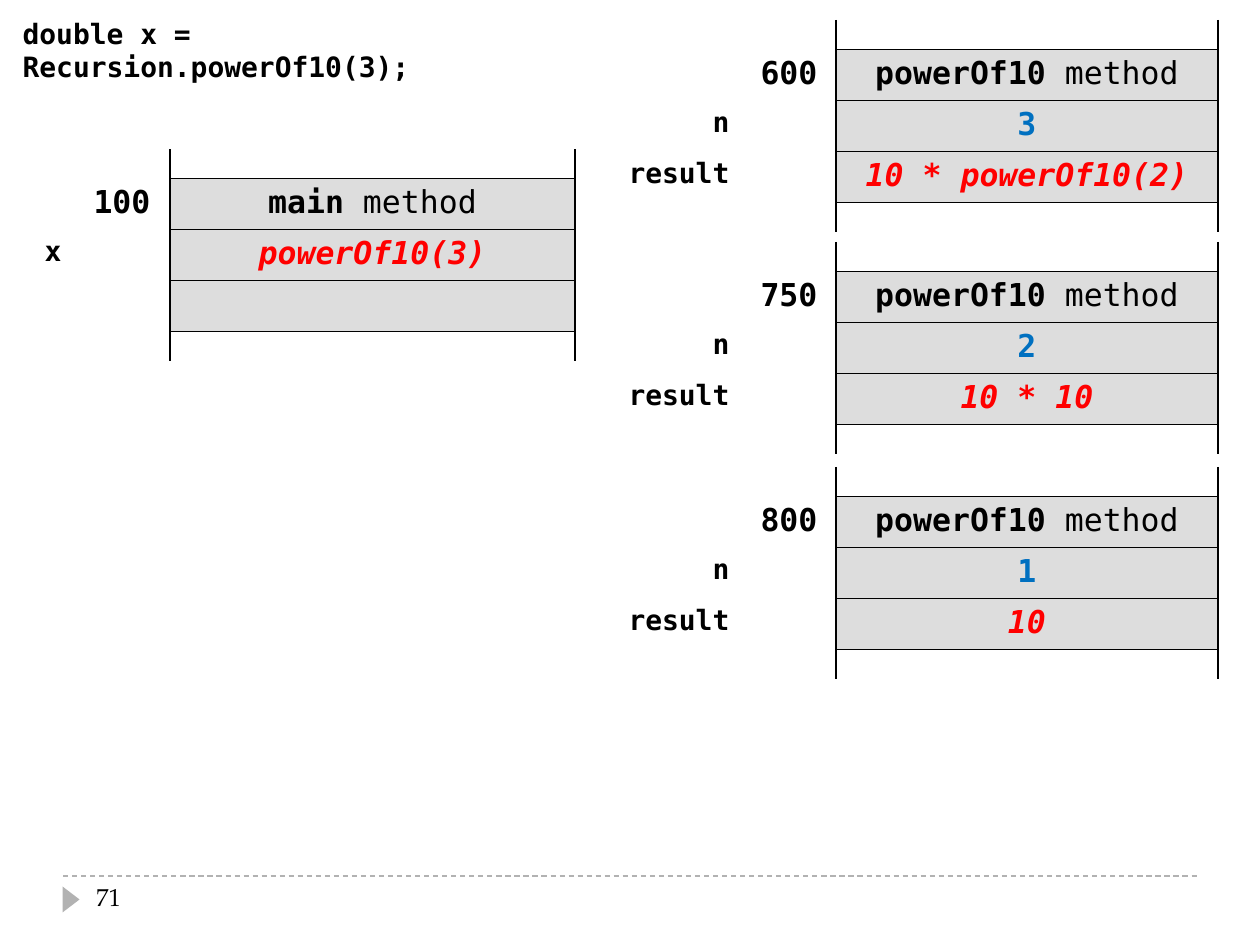
from lxml import etree
from pptx import Presentation
from pptx import util as u
from pptx.dml.color import RGBColor
from pptx.enum import dml, shapes, text
from pptx.oxml import ns

BLACK = RGBColor(0x00, 0x00, 0x00)
BLUE = RGBColor(0x00, 0x70, 0xC0)
RED = RGBColor(0xFF, 0x00, 0x00)
CELL_GREY = RGBColor(0xDD, 0xDD, 0xDD)
FOOTER_GREY = RGBColor(0xB2, 0xB2, 0xB2)
MONO, SERIF = "DejaVu Sans Mono", "TeX Gyre Pagella"
NO_GRID_STYLE = "{2D5ABB26-0587-4C30-8999-92F81FD0307C}"

STATEMENT = "double x = Recursion.powerOf10(3);"
PAGE_NUMBER = "71"
CALL_COLUMNS, MAIN_COLUMNS = (147, 94, 382), (67, 96, 405)
ROW_HEIGHTS = (29, 51, 51, 51, 29)
FRAMES = [
    dict(left=595, top=20, columns=CALL_COLUMNS, address="600", method="powerOf10 ",
         variables=[("n", "3", BLUE), ("result", "10 * powerOf10(2)", RED)]),
    dict(left=595, top=242, columns=CALL_COLUMNS, address="750", method="powerOf10 ",
         variables=[("n", "2", BLUE), ("result", "10 * 10", RED)]),
    dict(left=595, top=467, columns=CALL_COLUMNS, address="800", method="powerOf10 ",
         variables=[("n", "1", BLUE), ("result", "10", RED)]),
    dict(left=7, top=149, columns=MAIN_COLUMNS, address="100", method="main ",
         variables=[("x", "powerOf10(3)", RED), ("", "", RED)]),
]


def px(length):
    return u.Emu(round(length * 914400 / 126))


def add_run(paragraph, words, size, color=BLACK, bold=True, italic=False, font=MONO):
    run = paragraph.add_run()
    run.text = words
    run.font.name, run.font.size = font, u.Pt(size)
    run.font.bold, run.font.italic = bold, italic
    run.font.color.rgb = color


def fill_cell(cell, runs, align):
    paragraph = cell.text_frame.paragraphs[0]
    paragraph.alignment = align
    for words, size, color, bold, italic in runs:
        if words:
            add_run(paragraph, words, size, color, bold, italic)


def set_borders(cell, sides):
    properties = cell._tc.get_or_add_tcPr()
    for side in "LRTB":
        line = etree.SubElement(properties, ns.qn("a:ln" + side), w=str(u.Pt(1)))
        if side in sides:
            solid = etree.SubElement(line, ns.qn("a:solidFill"))
            etree.SubElement(solid, ns.qn("a:srgbClr"), val=str(BLACK))
        else:
            etree.SubElement(line, ns.qn("a:noFill"))


def add_frame(slide, left, top, columns, address, method, variables):
    graphic = slide.shapes.add_table(len(ROW_HEIGHTS), len(columns), px(left), px(top),
                                     px(sum(columns)), px(sum(ROW_HEIGHTS)))
    table = graphic.table
    table.first_row = table.horz_banding = False
    table._tbl.tblPr.find(ns.qn("a:tableStyleId")).text = NO_GRID_STYLE
    for column, width in zip(table.columns, columns):
        column.width = px(width)
    for row, height in zip(table.rows, ROW_HEIGHTS):
        row.height = px(height)

    center, right = text.PP_ALIGN.CENTER, text.PP_ALIGN.RIGHT
    fill_cell(table.cell(1, 1), [(address, 18, BLACK, True, False)], center)
    fill_cell(table.cell(1, 2), [(method, 18, BLACK, True, False),
                                 ("method", 18, BLACK, False, False)], center)
    for r, (variable, value, color) in enumerate(variables, 2):
        fill_cell(table.cell(r, 0), [(variable, 16, BLACK, True, False)], right)
        fill_cell(table.cell(r, 2), [(value, 18, color, True, color == RED)], center)

    last = len(ROW_HEIGHTS) - 1
    value_sides = {0: "LRB", last: "LRT"}
    for r in range(last + 1):
        for c, sides in enumerate(("", "R", value_sides.get(r, "LRTB"))):
            cell = table.cell(r, c)
            set_borders(cell, sides)
            if c == 2 and 0 < r < last:
                cell.fill.solid()
                cell.fill.fore_color.rgb = CELL_GREY
            else:
                cell.fill.background()
            if not cell.text:
                paragraph = cell.text_frame.paragraphs[0]
                etree.SubElement(paragraph._p, ns.qn("a:endParaRPr"), sz="800")


def add_footer(slide):
    rule = slide.shapes.add_connector(shapes.MSO_CONNECTOR.STRAIGHT,
                                      px(63), px(876), px(1197), px(876))
    rule.line.color.rgb = FOOTER_GREY
    rule.line.width = u.Pt(0.75)
    rule.line.dash_style = dml.MSO_LINE.DASH
    etree.SubElement(rule._element.spPr, ns.qn("a:effectLst"))

    marker = slide.shapes.add_shape(shapes.MSO_SHAPE.ISOSCELES_TRIANGLE,
                                    px(58), px(891), px(26), px(17))
    marker.rotation = 90
    marker.shadow.inherit = False
    marker.fill.solid()
    marker.fill.fore_color.rgb = FOOTER_GREY
    marker.line.fill.background()

    number = slide.shapes.add_textbox(px(84), px(876), px(273), px(50))
    number.text_frame.word_wrap = True
    add_run(number.text_frame.paragraphs[0], PAGE_NUMBER, 14, bold=False, font=SERIF)


def add_statement(slide):
    statement = slide.shapes.title
    statement.left, statement.top = px(10), px(10)
    statement.width, statement.height = px(551), px(47)
    frame = statement.text_frame
    frame.word_wrap = True
    frame.auto_size = text.MSO_AUTO_SIZE.NONE
    frame.vertical_anchor = text.MSO_ANCHOR.TOP
    paragraph = frame.paragraphs[0]
    paragraph.alignment = text.PP_ALIGN.LEFT
    paragraph.space_before = u.Pt(0)
    add_run(paragraph, STATEMENT, 16)


def main():
    deck = Presentation()
    deck.slide_width, deck.slide_height = px(1260), px(945)
    slide = deck.slides.add_slide(deck.slide_layouts.get_by_name("Title Only"))
    add_footer(slide)
    for frame in FRAMES:
        add_frame(slide, **frame)
    add_statement(slide)
    deck.save("out.pptx")


if __name__ == "__main__":
    main()
